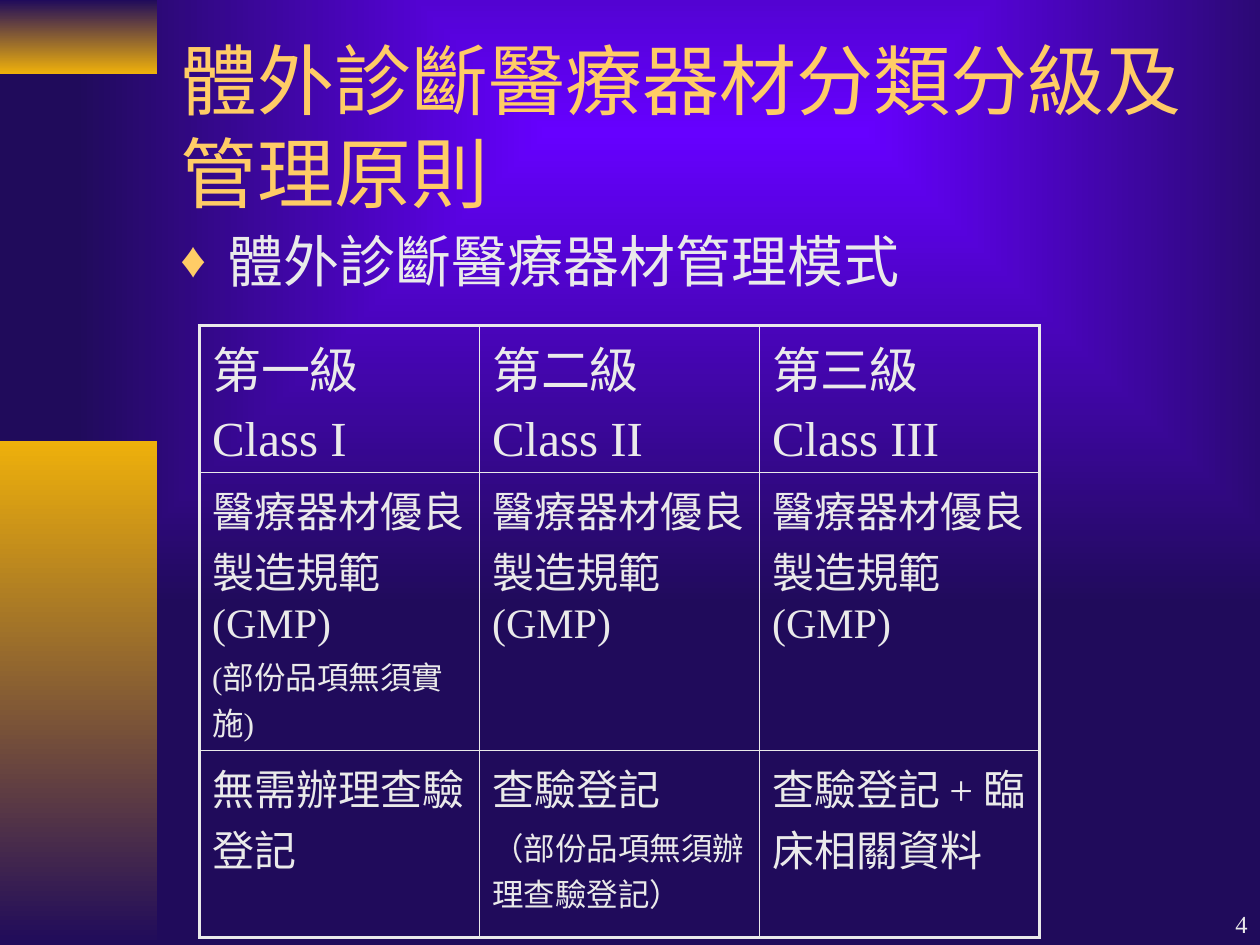
"""Build the slide on classes and control of in vitro diagnostic devices."""
from dataclasses import dataclass

from lxml.etree import SubElement
from pptx import Presentation
from pptx.dml.color import RGBColor
from pptx.enum.shapes import MSO_SHAPE as Shape
from pptx.enum.text import MSO_ANCHOR as Anchor, PP_ALIGN as Align
from pptx.oxml import parse_xml
from pptx.oxml.ns import nsdecls, qn
from pptx.util import Pt

FONT = "Times New Roman"
NAVY, VIOLET, GOLD = "200B5B", "6600FF", "EEB00B"
TITLE_COLOR, TEXT_COLOR = "FFCC66", "EAEAEA"
THICK, THIN = 2.25, 1
GMP = "醫療器材優良製造規範(GMP)"


@dataclass
class Line:
    text: str
    size: float
    color: str = TEXT_COLOR
    align: Align = Align.LEFT
    bullet: str = ""


@dataclass
class Band:
    top: float
    height: float
    start: str
    end: str


@dataclass
class Label:
    left: float
    top: float
    width: float
    height: float
    line: Line
    anchor: Anchor


BANDS = [Band(0, 42, NAVY, GOLD), Band(252, 288, GOLD, NAVY)]
LABELS = [
    Label(570, 504, 150, 36, Line("4", 14, align=Align.RIGHT), Anchor.BOTTOM),
    Label(96, 24, 612, 95, Line("體外診斷醫療器材分類分級及管理原則", 44, TITLE_COLOR), Anchor.MIDDLE),
    Label(96, 126, 612, 354, Line("體外診斷醫療器材管理模式", 32, bullet="♦"), Anchor.TOP),
]
ROW_HEIGHTS = [84, 159, 106.8]
COLUMN_WIDTH = 160
CELLS = [
    [[Line("第一級", 28), Line("Class I", 28)],
     [Line("第二級", 28), Line("Class II", 28)],
     [Line("第三級", 28), Line("Class III", 28)]],
    [[Line(GMP, 24), Line("(部份品項無須實施)", 18)], [Line(GMP, 24)], [Line(GMP, 24)]],
    [[Line("無需辦理查驗登記", 24)],
     [Line("查驗登記", 24), Line("（部份品項無須辦理查驗登記）", 18)],
     [Line("查驗登記 + 臨床相關資料", 24)]],
]


def rgb(color: str) -> RGBColor:
    return RGBColor.from_string(color)


def set_gradient(fill, start: str, end: str) -> None:
    fill.gradient()
    fill.gradient_angle = 270
    for stop, color in zip(fill.gradient_stops, (start, end)):
        stop.color.rgb = rgb(color)


def paint_background(slide) -> None:
    set_gradient(slide.background.fill, VIOLET, NAVY)
    gradient = slide.element.find(".//" + qn("a:gradFill"))
    gradient.remove(gradient.find(qn("a:lin")))
    path = SubElement(gradient, qn("a:path"), path="shape")
    SubElement(path, qn("a:fillToRect"), l="14000", t="6000", r="1000", b="78000")


def add_bullet(paragraph, mark: str) -> None:
    properties = paragraph._p.get_or_add_pPr()
    properties.set("marL", str(Pt(27)))
    properties.set("indent", str(-Pt(27)))
    color = SubElement(properties, qn("a:buClr"))
    SubElement(color, qn("a:srgbClr"), val=TITLE_COLOR)
    SubElement(properties, qn("a:buSzPct"), val="90000")
    SubElement(properties, qn("a:buFont"), typeface=FONT)
    SubElement(properties, qn("a:buChar"), char=mark)


def write_lines(frame, lines: list[Line]) -> None:
    for index, line in enumerate(lines):
        paragraph = frame.add_paragraph() if index else frame.paragraphs[0]
        paragraph.text = line.text
        if line.bullet:
            add_bullet(paragraph, line.bullet)
        paragraph.alignment = line.align
        if index:
            paragraph.space_before = Pt(round(line.size * 0.2, 1))
        paragraph.font.name = FONT
        paragraph.font.size = Pt(line.size)
        paragraph.font.color.rgb = rgb(line.color)


def add_band(slide, band: Band) -> None:
    shape = slide.shapes.add_shape(Shape.RECTANGLE, 0, Pt(band.top), Pt(90), Pt(band.height))
    shape.shadow.inherit = False
    shape.line.fill.background()
    set_gradient(shape.fill, band.start, band.end)


def add_label(slide, label: Label) -> None:
    box = slide.shapes.add_textbox(Pt(label.left), Pt(label.top), Pt(label.width), Pt(label.height))
    box.text_frame.word_wrap = True
    box.text_frame.vertical_anchor = label.anchor
    write_lines(box.text_frame, [label.line])


def set_borders(cell, widths: dict[str, float]) -> None:
    properties = cell._tc.get_or_add_tcPr()
    for index, (side, width) in enumerate(widths.items()):
        properties.insert(index, parse_xml(
            f'<a:ln{side} {nsdecls("a")} w="{Pt(width)}"><a:solidFill>'
            f'<a:srgbClr val="{TEXT_COLOR}"/></a:solidFill></a:ln{side}>'))


def add_class_table(slide) -> None:
    rows, columns = len(CELLS), len(CELLS[0])
    table = slide.shapes.add_table(rows, columns, Pt(114), Pt(186), Pt(COLUMN_WIDTH * columns),
                                   Pt(sum(ROW_HEIGHTS))).table
    table.first_row = table.horz_banding = False
    for column in table.columns:
        column.width = Pt(COLUMN_WIDTH)
    for r, height in enumerate(ROW_HEIGHTS):
        table.rows[r].height = Pt(height)
        for c, lines in enumerate(CELLS[r]):
            cell = table.cell(r, c)
            cell.fill.background()
            write_lines(cell.text_frame, lines)
            outer = {"L": c == 0, "R": c == columns - 1, "T": r == 0, "B": r == rows - 1}
            set_borders(cell, {side: THICK if edge else THIN for side, edge in outer.items()})


def main() -> None:
    deck = Presentation()
    deck.slide_width, deck.slide_height = Pt(720), Pt(540)
    slide = deck.slides.add_slide(deck.slide_layouts[6])
    paint_background(slide)
    for band in BANDS:
        add_band(slide, band)
    for label in LABELS:
        add_label(slide, label)
    add_class_table(slide)
    deck.save("out.pptx")


if __name__ == "__main__":
    main()
